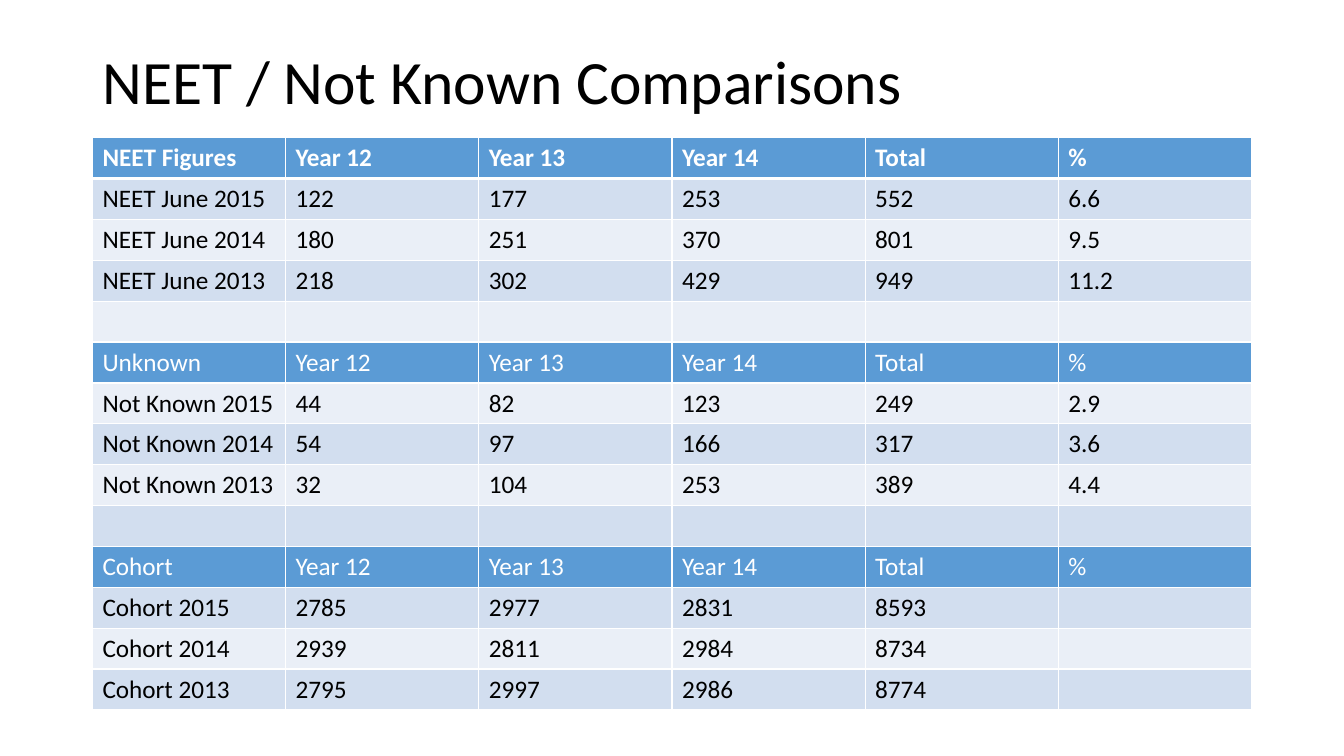
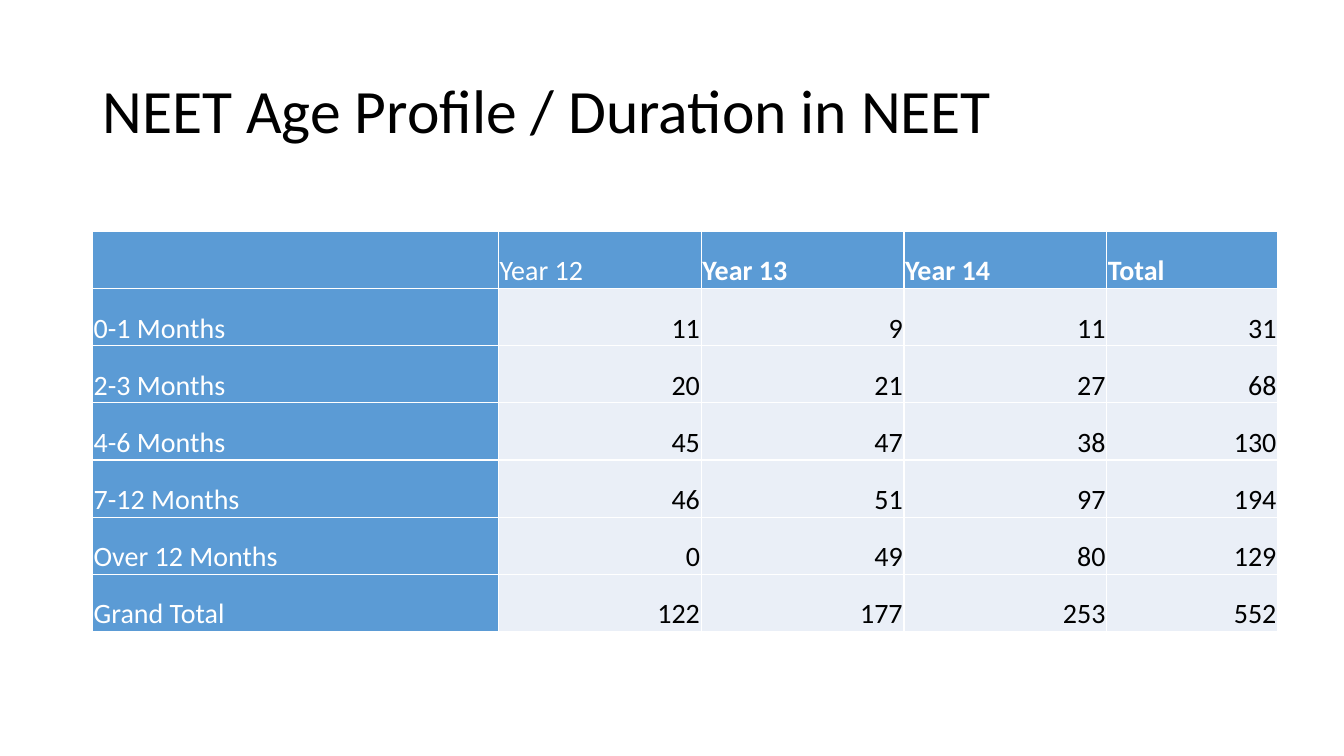
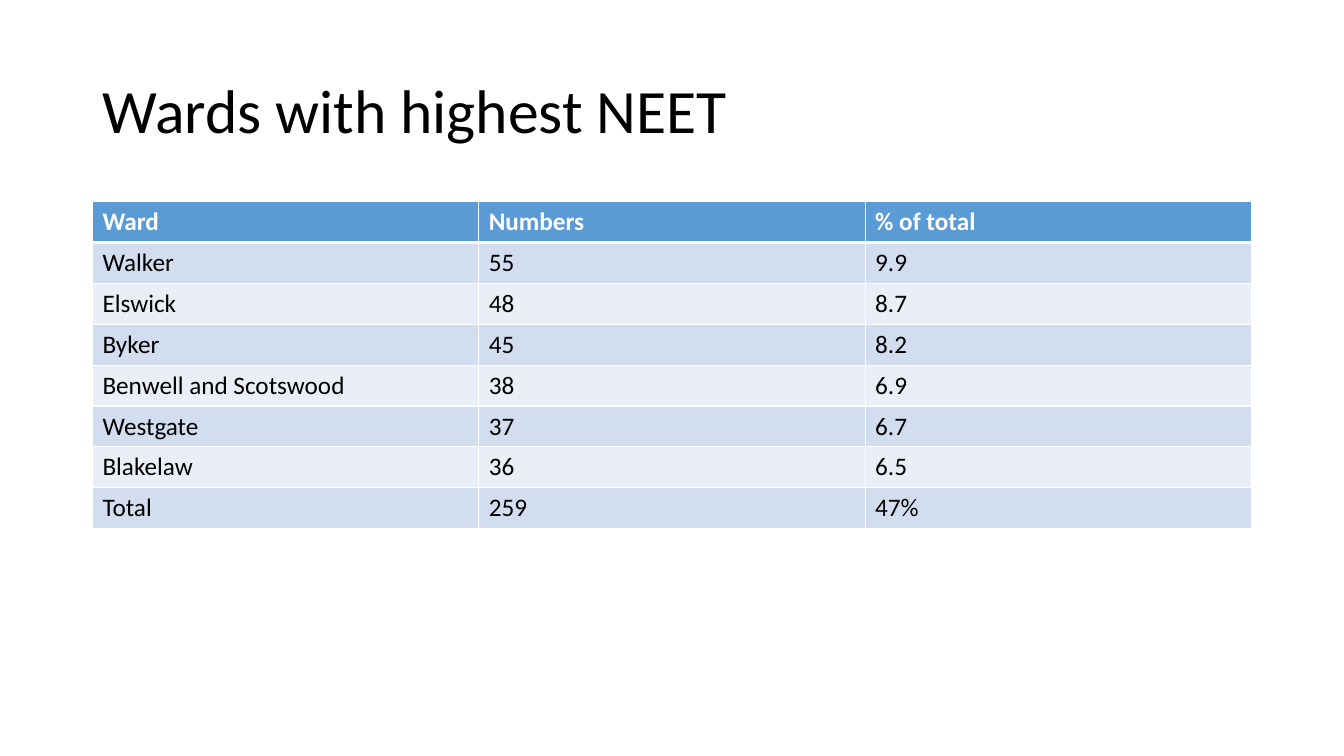
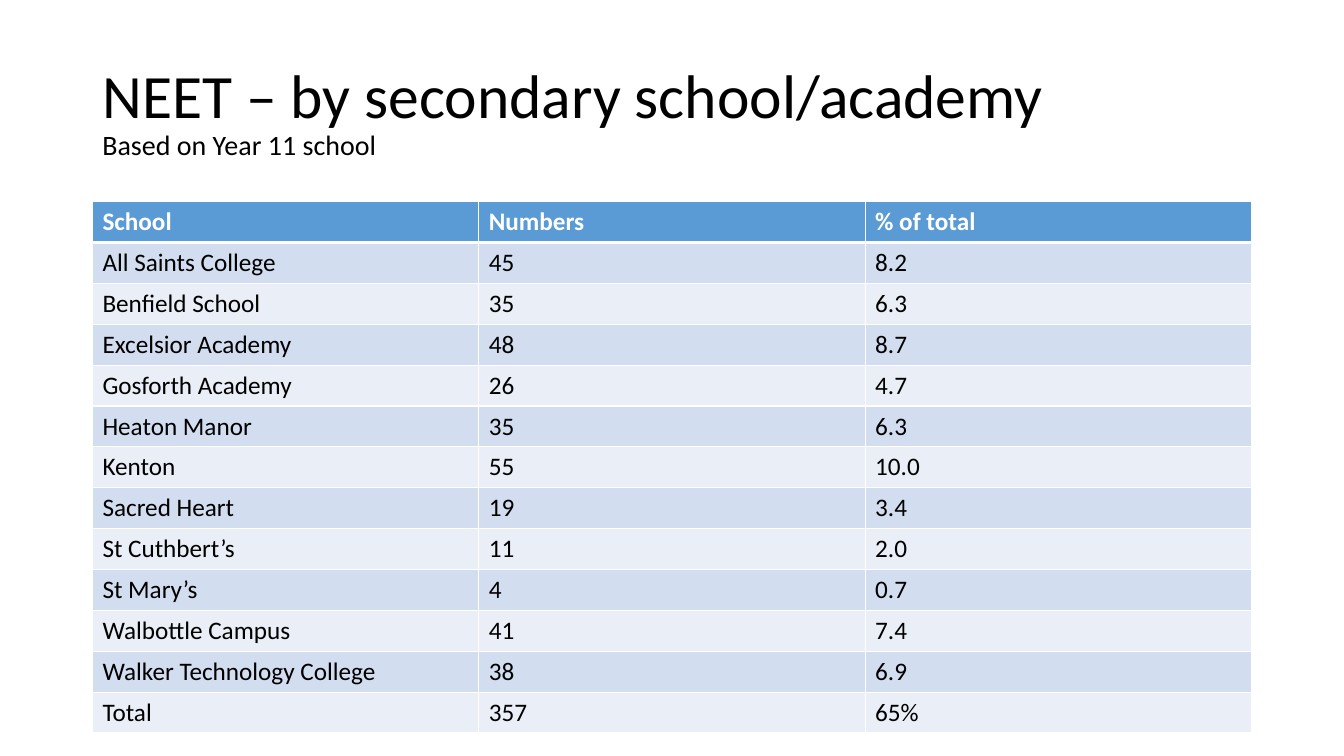
from dataclasses import dataclass

from lxml.etree import SubElement
from pptx import Presentation
from pptx.dml.color import RGBColor
from pptx.enum.text import MSO_ANCHOR as Anchor, PP_ALIGN as Align
from pptx.oxml.ns import qn
from pptx.util import Cm, Pt


@dataclass(frozen=True)
class Theme:
    font: str = "Calibri"
    ink: str = "000000"
    paper: str = "FFFFFF"
    header: str = "5B9BD5"
    band_dark: str = "D2DEEF"
    band_light: str = "EAEFF7"
    title_size: int = 44
    subtitle_size: int = 20
    body_size: int = 18
    profile_size: int = 20
    thin: int = 1
    thick: int = 3


THEME = Theme()
LEFT, TITLE_TOP, WIDTH = 2.33, 1.02, 29.21
TITLE_HEIGHT, SHORT_TITLE_HEIGHT = 3.68, 2.24
ROW_HEIGHT, PROFILE_ROW_HEIGHT = 1.03, 1.44
PROFILE_WIDTHS = [10.23, 5.11, 5.11, 5.11, 4.31]

YEARS = ["Year 12", "Year 13", "Year 14", "Total"]
BLANK_ROW = [""] * 6
SECTION_ROWS = (0, 5, 10)

COMPARISONS = [
    ["NEET Figures", *YEARS, "%"],
    ["NEET June 2015", "122", "177", "253", "552", "6.6"],
    ["NEET June 2014", "180", "251", "370", "801", "9.5"],
    ["NEET June 2013", "218", "302", "429", "949", "11.2"],
    BLANK_ROW,
    ["Unknown", *YEARS, "%"],
    ["Not Known 2015", "44", "82", "123", "249", "2.9"],
    ["Not Known 2014", "54", "97", "166", "317", "3.6"],
    ["Not Known 2013", "32", "104", "253", "389", "4.4"],
    BLANK_ROW,
    ["Cohort", *YEARS, "%"],
    ["Cohort 2015", "2785", "2977", "2831", "8593", ""],
    ["Cohort 2014", "2939", "2811", "2984", "8734", ""],
    ["Cohort 2013", "2795", "2997", "2986", "8774", ""],
]

AGE_PROFILE = [
    ["", *YEARS],
    ["0-1 Months", "11", "9", "11", "31"],
    ["2-3 Months", "20", "21", "27", "68"],
    ["4-6 Months", "45", "47", "38", "130"],
    ["7-12 Months", "46", "51", "97", "194"],
    ["Over 12 Months", "0", "49", "80", "129"],
    ["Grand Total", "122", "177", "253", "552"],
]

WARDS = [
    ["Ward", "Numbers", "% of total"],
    ["Walker", "55", "9.9"],
    ["Elswick", "48", "8.7"],
    ["Byker", "45", "8.2"],
    ["Benwell and Scotswood", "38", "6.9"],
    ["Westgate", "37", "6.7"],
    ["Blakelaw", "36", "6.5"],
    ["Total", "259", "47%"],
]

SCHOOLS = [
    ["School", "Numbers", "% of total"],
    ["All Saints College", "45", "8.2"],
    ["Benfield School", "35", "6.3"],
    ["Excelsior Academy", "48", "8.7"],
    ["Gosforth Academy", "26", "4.7"],
    ["Heaton Manor", "35", "6.3"],
    ["Kenton", "55", "10.0"],
    ["Sacred Heart", "19", "3.4"],
    ["St Cuthbert’s", "11", "2.0"],
    ["St Mary’s", "4", "0.7"],
    ["Walbottle Campus", "41", "7.4"],
    ["Walker Technology College", "38", "6.9"],
    ["Total", "357", "65%"],
]


def add_span(para, text, size, color=THEME.ink, bold=False):
    span = para.add_run()
    span.text = text
    font = span.font
    font.name, font.size, font.bold = THEME.font, Pt(size), bold
    font.color.rgb = RGBColor.from_string(color)


def add_title(page, title, subtitle="", height=TITLE_HEIGHT):
    box = page.shapes.add_textbox(Cm(LEFT), Cm(TITLE_TOP), Cm(WIDTH), Cm(height))
    frame = box.text_frame
    frame.word_wrap = True
    frame.vertical_anchor = Anchor.MIDDLE
    para = frame.paragraphs[0]
    para.line_spacing = 0.9
    add_span(para, title, THEME.title_size)
    if subtitle:
        para.add_line_break()
        add_span(para, subtitle, THEME.subtitle_size)


def set_borders(cell, top, bottom):
    properties = cell._tc.get_or_add_tcPr()
    sides = [("lnL", THEME.thin), ("lnR", THEME.thin), ("lnT", top), ("lnB", bottom)]
    for position, (side, width) in enumerate(sides):
        line = SubElement(properties, qn(f"a:{side}"), w=str(Pt(width)))
        fill = SubElement(line, qn("a:solidFill"))
        SubElement(fill, qn("a:srgbClr"), val=THEME.paper)
        properties.insert(position, line)


def paint_cell(cell, fill, top=THEME.thin, bottom=THEME.thin):
    cell.fill.solid()
    cell.fill.fore_color.rgb = RGBColor.from_string(fill)
    set_borders(cell, top, bottom)


def add_grid(page, rows, top, widths, row_height):
    frame = page.shapes.add_table(
        len(rows), len(widths), Cm(LEFT), Cm(top), Cm(sum(widths)), Cm(row_height * len(rows))
    )
    table = frame.table
    table.first_row = table.horz_banding = False
    for column, width in zip(table.columns, widths):
        column.width = Cm(width)
    for row in table.rows:
        row.height = Cm(row_height)
    return table


def add_banded_table(page, rows, top, section_rows=(0,)):
    count = len(rows[0])
    table = add_grid(page, rows, top, [WIDTH / count] * count, ROW_HEIGHT)
    for i, row in enumerate(rows):
        is_section = i in section_rows
        band = THEME.band_dark if i % 2 else THEME.band_light
        fill = THEME.header if is_section else band
        color = THEME.paper if is_section else THEME.ink
        top_line = THEME.thick if i == 1 else THEME.thin
        bottom_line = THEME.thick if i == 0 else THEME.thin
        for j, text in enumerate(row):
            cell = table.cell(i, j)
            paint_cell(cell, fill, top_line, bottom_line)
            if text:
                add_span(cell.text_frame.paragraphs[0], text, THEME.body_size, color, i == 0)


def add_profile_table(page, rows, top):
    table = add_grid(page, rows, top, PROFILE_WIDTHS, PROFILE_ROW_HEIGHT)
    for i, row in enumerate(rows):
        for j, text in enumerate(row):
            cell = table.cell(i, j)
            is_header = i == 0 or j == 0
            paint_cell(cell, THEME.header if is_header else THEME.band_light)
            cell.vertical_anchor = Anchor.BOTTOM
            cell.margin_left = cell.margin_right = cell.margin_top = Cm(0.03)
            cell.margin_bottom = Cm(0)
            para = cell.text_frame.paragraphs[0]
            para.alignment = Align.LEFT if is_header else Align.RIGHT
            if text:
                color = THEME.paper if is_header else THEME.ink
                add_span(para, text, THEME.profile_size, color, i == 0 and j > 1)


def main():
    deck = Presentation()
    deck.slide_width, deck.slide_height = Cm(33.87), Cm(19.05)
    blank = deck.slide_layouts[6]

    page = deck.slides.add_slide(blank)
    add_title(page, "NEET / Not Known Comparisons", height=SHORT_TITLE_HEIGHT)
    add_banded_table(page, COMPARISONS, 3.47, SECTION_ROWS)

    page = deck.slides.add_slide(blank)
    add_title(page, "NEET Age Profile / Duration in NEET")
    add_profile_table(page, AGE_PROFILE, 5.83)

    page = deck.slides.add_slide(blank)
    add_title(page, "Wards with highest NEET")
    add_banded_table(page, WARDS, 5.08)

    page = deck.slides.add_slide(blank)
    add_title(page, "NEET – by secondary school/academy", "Based on Year 11 school")
    add_banded_table(page, SCHOOLS, 5.08)

    deck.save("out.pptx")


if __name__ == "__main__":
    main()
